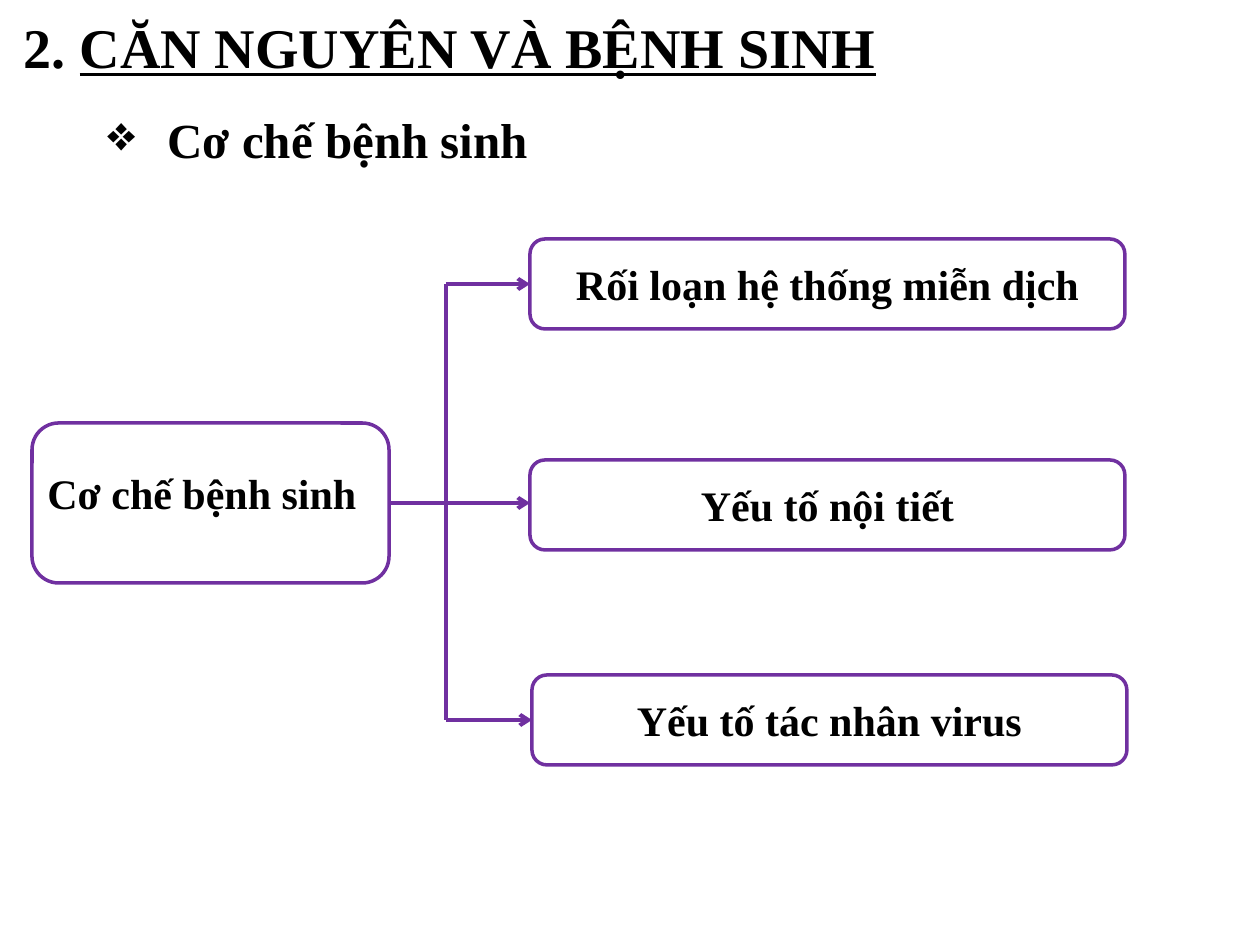
from dataclasses import dataclass

from lxml import etree
from pptx import Presentation
from pptx.dml.color import RGBColor
from pptx.enum.shapes import MSO_CONNECTOR, MSO_SHAPE
from pptx.enum.text import MSO_ANCHOR, MSO_AUTO_SIZE, PP_ALIGN
from pptx.oxml.ns import qn
from pptx.util import Emu, Pt

ROUND = MSO_SHAPE.ROUNDED_RECTANGLE
STRAIGHT = MSO_CONNECTOR.STRAIGHT
LEFT, CENTER = PP_ALIGN.LEFT, PP_ALIGN.CENTER
TOP, MIDDLE = MSO_ANCHOR.TOP, MSO_ANCHOR.MIDDLE
GROW = MSO_AUTO_SIZE.SHAPE_TO_FIT_TEXT
LEFT_SIDE, RIGHT_SIDE = 1, 3

COLORS = {"text": "000000", "line": "7030A0"}
FONT = {"name": "Times New Roman", "bold": True}
SCALE = 914400 / 126
INDENT = 48


@dataclass
class Box:
    text: str
    x: int
    y: int
    w: int = 595
    h: int = 90


ROOT = Box("", 32, 423, 357, 160)
CAUSES = [
    Box("Rối loạn hệ thống miễn dịch", 530, 239),
    Box("Yếu tố nội tiết", 530, 460),
    Box("Yếu tố tác nhân virus", 532, 675),
]
SPINE = 446


def px(n: int) -> Emu:
    return Emu(round(n * SCALE))


def color(key: str) -> RGBColor:
    return RGBColor.from_string(COLORS[key])


def assign(item, values: dict) -> None:
    for name, value in values.items():
        setattr(item, name, value)


def place(shape, x: int, y: int, w: int, h: int) -> None:
    assign(shape, {"left": px(x), "top": px(y), "width": px(w), "height": px(h)})


def add_run(para, text: str, size: int, **extra) -> None:
    run = para.add_run()
    run.text = text
    assign(run.font, {**FONT, "size": Pt(size), **extra})
    run.font.color.rgb = color("text")


def add_label(slide, text: str, size: int, area: tuple, wrap: bool):
    label = slide.shapes.add_textbox(*map(px, area))
    assign(label.text_frame, {"word_wrap": wrap, "auto_size": GROW})
    para = label.text_frame.paragraphs[0]
    add_run(para, text, size)
    return para


def add_bullet(para, mark: str) -> None:
    props = para._p.get_or_add_pPr()
    props.set("marL", str(px(INDENT)))
    props.set("indent", str(-px(INDENT)))
    etree.SubElement(props, qn("a:buChar")).set("char", mark)


def add_box(slide, box: Box):
    shape = slide.shapes.add_shape(ROUND, *map(px, (box.x, box.y, box.w, box.h)))
    shape.shadow.inherit = False
    shape.fill.background()
    shape.line.color.rgb = color("line")
    shape.line.width = Pt(2)
    if box.text:
        shape.text_frame.vertical_anchor = MIDDLE
        para = shape.text_frame.paragraphs[0]
        para.alignment = CENTER
        add_run(para, box.text, 24)
    return shape


def add_line(slide, x1: int, y1: int, x2: int, y2: int, arrow: bool = False):
    link = slide.shapes.add_connector(STRAIGHT, *map(px, (x1, y1, x2, y2)))
    link.line.color.rgb = color("line")
    link.line.width = Pt(2.25)
    props = link._element.spPr
    if arrow:
        etree.SubElement(link.line._get_or_add_ln(), qn("a:tailEnd")).set("type", "arrow")
    etree.SubElement(props, qn("a:effectLst"))
    return link


def add_title(slide) -> None:
    title = slide.shapes.title
    place(title, 11, 6, 906, 81)
    assign(title.text_frame, {"word_wrap": False, "auto_size": GROW, "vertical_anchor": TOP})
    para = title.text_frame.paragraphs[0]
    para.alignment = LEFT
    add_run(para, "2. ", 32)
    add_run(para, "CĂN NGUYÊN VÀ BỆNH SINH", 32, underline=True)


def add_tree(slide) -> None:
    root = add_box(slide, ROOT)
    add_label(slide, "Cơ chế bệnh sinh", 24, (35, 461, 338, 63), False)
    mid = ROOT.y + ROOT.h // 2
    stem = add_line(slide, ROOT.x + ROOT.w, mid, SPINE, mid)
    stem.begin_connect(root, RIGHT_SIDE)
    rows = [box.y + box.h // 2 for box in CAUSES]
    rows[1] = mid
    add_line(slide, SPINE, rows[-1], SPINE, rows[0])
    for box, row in zip(CAUSES, rows):
        shape = add_box(slide, box)
        link = add_line(slide, SPINE, row, box.x, row, arrow=True)
        if row == box.y + box.h // 2:
            link.end_connect(shape, LEFT_SIDE)


def main() -> None:
    deck = Presentation()
    assign(deck, {"slide_width": px(1260), "slide_height": px(945)})
    slide = deck.slides.add_slide(deck.slide_layouts[5])
    add_title(slide)
    add_bullet(add_label(slide, " Cơ chế bệnh sinh", 28, (95, 103, 494, 72), True), "❖")
    add_tree(slide)
    deck.save("out.pptx")


if __name__ == "__main__":
    main()
